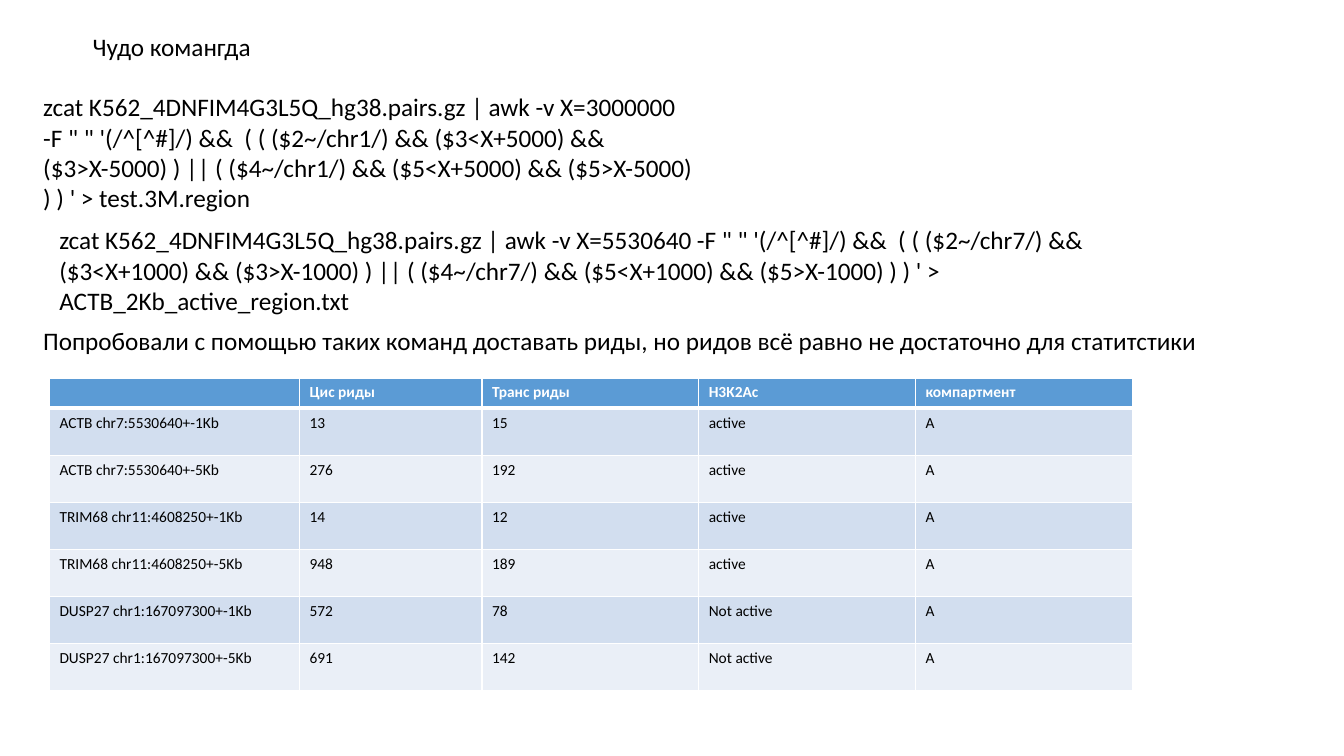
from dataclasses import dataclass

from lxml.etree import SubElement
from pptx import Presentation
from pptx.dml.color import RGBColor
from pptx.enum.text import MSO_AUTO_SIZE
from pptx.oxml.ns import qn
from pptx.util import Inches, Pt


@dataclass(frozen=True)
class Theme:
    font: str = "Calibri"
    text_size: int = 18
    table_size: int = 11
    text: str = "000000"
    light: str = "FFFFFF"
    header: str = "5B9BD5"
    bands: tuple = ("D2DEEF", "EAEFF7")
    rule: int = 1
    header_rule: int = 3


THEME = Theme()

HEADINGS = ("", "Цис риды", "Транс риды", "H3K2Ac", "компартмент")
READS = (
    ("ACTB chr7:5530640+-1Kb", "13", "15", "active", "A"),
    ("ACTB chr7:5530640+-5Kb", "276", "192", "active", "A"),
    ("TRIM68 chr11:4608250+-1Kb", "14", "12", "active", "A"),
    ("TRIM68 chr11:4608250+-5Kb", "948", "189", "active", "A"),
    ("DUSP27 chr1:167097300+-1Kb", "572", "78", "Not active", "A"),
    ("DUSP27 chr1:167097300+-5Kb", "691", "142", "Not active", "A"),
)
COLUMN_WIDTHS = (2.48, 1.81, 2.15, 2.15, 2.15)
TABLE_HEIGHT = 3.1
HEADER_HEIGHT = 0.3


def region_command(chromosome, center, window, output):
    """Shell command that keeps the read pairs touching a window."""
    def side(name, position):
        return (f"( (${name}~/{chromosome}/) && (${position}<X+{window})"
                f" && (${position}>X-{window}) )")

    return (f"zcat K562_4DNFIM4G3L5Q_hg38.pairs.gz | awk -v X={center} "
            f"-F \" \" '(/^[^#]/) &&  ( {side(2, 3)} || {side(4, 5)} ) ' > {output}")


def style_paragraph(paragraph, size, color, bold=False):
    font = paragraph.font
    font.name = THEME.font
    font.size = Pt(size)
    font.bold = bold
    font.color.rgb = RGBColor.from_string(color)


def add_text(slide, text, left, top, width, height):
    box = slide.shapes.add_textbox(Inches(left), Inches(top), Inches(width), Inches(height))
    frame = box.text_frame
    frame.word_wrap = True
    frame.auto_size = MSO_AUTO_SIZE.SHAPE_TO_FIT_TEXT
    frame.text = text
    style_paragraph(frame.paragraphs[0], THEME.text_size, THEME.text)


def set_borders(cell, top, bottom):
    properties = cell._tc.get_or_add_tcPr()
    widths = {"a:lnL": THEME.rule, "a:lnR": THEME.rule, "a:lnT": top, "a:lnB": bottom}
    for edge, width in widths.items():
        line = SubElement(properties, qn(edge), w=str(Pt(width)))
        fill = SubElement(line, qn("a:solidFill"))
        SubElement(fill, qn("a:srgbClr"), val=THEME.light)


def fill_cell(cell, text, row):
    is_header = row == 0
    set_borders(cell,
                top=THEME.header_rule if row == 1 else THEME.rule,
                bottom=THEME.header_rule if is_header else THEME.rule)
    cell.fill.solid()
    background = THEME.header if is_header else THEME.bands[(row - 1) % 2]
    cell.fill.fore_color.rgb = RGBColor.from_string(background)
    cell.text = text
    style_paragraph(cell.text_frame.paragraphs[0], THEME.table_size,
                    THEME.light if is_header else THEME.text, bold=is_header)


def add_reads_table(slide, left, top):
    rows = (HEADINGS, *READS)
    table = slide.shapes.add_table(
        len(rows), len(HEADINGS), Inches(left), Inches(top),
        Inches(sum(COLUMN_WIDTHS)), Inches(TABLE_HEIGHT)).table
    for column, width in zip(table.columns, COLUMN_WIDTHS):
        column.width = Inches(width)
    body_height = (TABLE_HEIGHT - HEADER_HEIGHT) / len(READS)
    for row, values in enumerate(rows):
        table.rows[row].height = Inches(body_height if row else HEADER_HEIGHT)
        for column, value in enumerate(values):
            fill_cell(table.cell(row, column), value, row)


def main():
    presentation = Presentation()
    presentation.slide_width = Inches(13.33)
    presentation.slide_height = Inches(7.5)
    slide = presentation.slides.add_slide(presentation.slide_layouts[6])

    # Commands and their title
    add_text(slide, region_command("chr1", 3000000, 5000, "test.3M.region"),
             0.33, 0.86, 6.67, 1.31)
    add_text(slide, "Чудо комангда", 0.82, 0.26, 4.22, 0.4)
    add_text(slide, region_command("chr7", 5530640, 1000, "ACTB_2Kb_active_region.txt"),
             0.49, 2.18, 11.11, 1.01)

    # Conclusion and read counts
    add_text(slide, "Попробовали с помощью таких команд доставать риды, "
                    "но ридов всё равно не достаточно для статитстики",
             0.33, 3.18, 12.3, 0.4)
    add_reads_table(slide, 0.49, 3.75)

    presentation.save("out.pptx")


if __name__ == "__main__":
    main()
